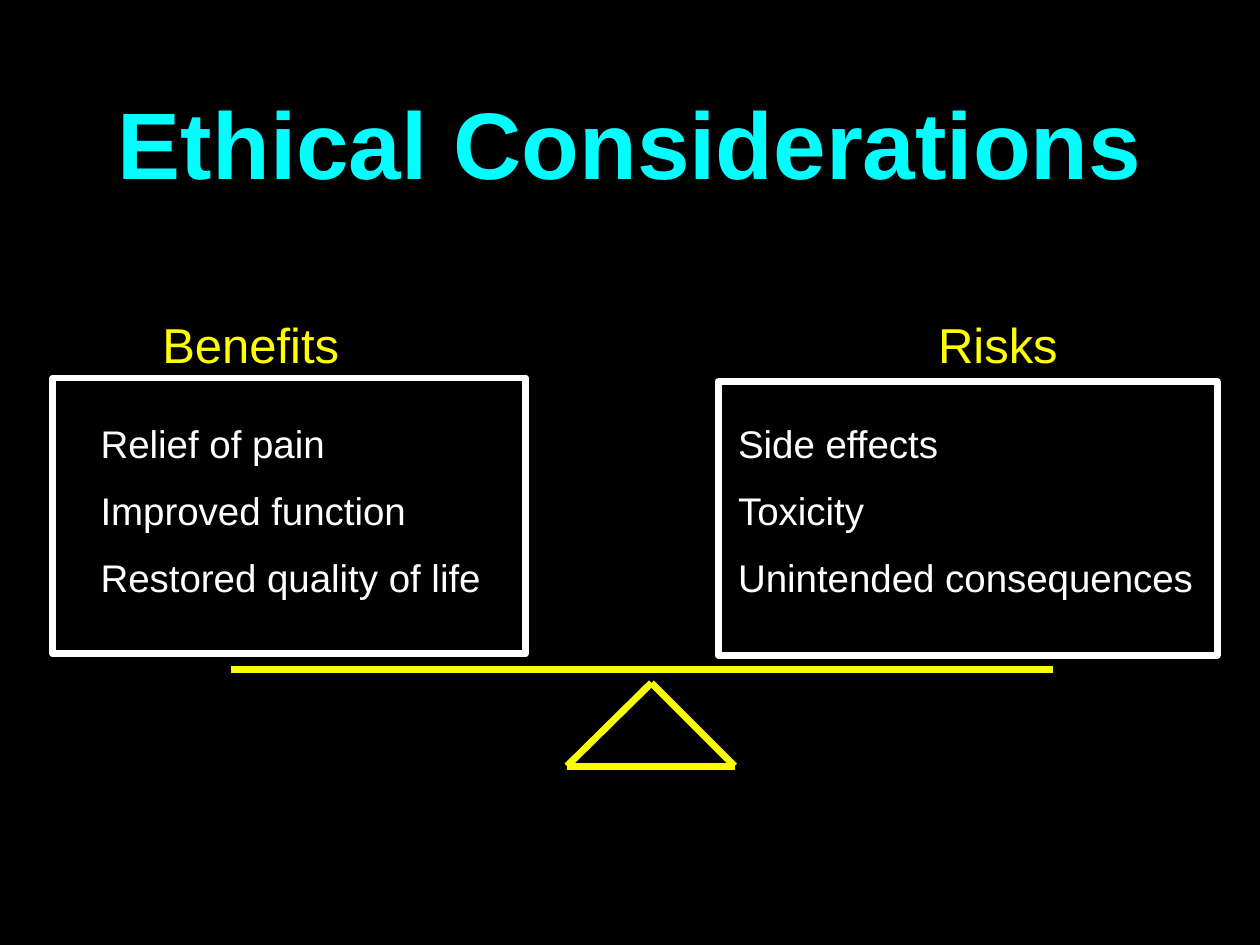
import pptx
import pptx.dml.color
import pptx.enum.shapes
import pptx.enum.text
import pptx.oxml.ns
import pptx.util
from lxml import etree

Inches = pptx.util.Inches
Pt = pptx.util.Pt
ALIGN = pptx.enum.text.PP_ALIGN
ANCHOR = pptx.enum.text.MSO_ANCHOR
COLORS = {
    "background": "000000",
    "title": "00FFFF",
    "heading": "FFFF00",
    "scale": "FAFD00",
    "white": "FFFFFF",
}


def color(name):
    """Return the named colour."""
    return pptx.dml.color.RGBColor.from_string(COLORS[name])


def add_text(slide, box, text, size, fill, bold=False, align=ALIGN.LEFT,
             anchor=ANCHOR.TOP, inset=0.1, top=0.08, gap=0):
    """Place text in a box, one paragraph for each line."""
    frame = slide.shapes.add_textbox(*map(Inches, box)).text_frame
    frame.word_wrap = True
    frame.vertical_anchor = anchor
    frame.margin_left = Inches(inset)
    frame.margin_top = Inches(top)
    for index, line in enumerate(text.split("\n")):
        para = frame.paragraphs[0] if index == 0 else frame.add_paragraph()
        para.alignment = align
        para.space_before = Pt(gap if index else 0)
        span = para.add_run()
        span.text = line
        span.font.name = "Arial"
        span.font.size = Pt(size)
        span.font.bold = bold
        span.font.color.rgb = color(fill)


def add_line(slide, start, end):
    """Draw one straight beam of the scale."""
    line = slide.shapes.add_connector(
        pptx.enum.shapes.MSO_CONNECTOR.STRAIGHT, *map(Inches, start + end))
    line.line.color.rgb = color("scale")
    line.line.width = Pt(4)
    properties = line.element.find(pptx.oxml.ns.qn("p:spPr"))
    etree.SubElement(properties, pptx.oxml.ns.qn("a:effectLst"))


def add_scale(slide, box):
    """Draw the balance beam on its triangular pivot."""
    left, top, width, height = box
    apex = (left + 3.34, top + 0.11)
    base_left = (apex[0] - 0.67, top + height)
    base_right = (apex[0] + 0.66, top + height)
    add_line(slide, (left, top), (left + width, top))
    add_line(slide, apex, base_left)
    add_line(slide, apex, base_right)
    add_line(slide, base_right, base_left)


def add_pan(slide, box, heading, items, heading_left, heading_width,
            heading_align, item_left):
    """Draw one framed list with its heading above."""
    left, top, width, height = box
    frame = slide.shapes.add_shape(
        pptx.enum.shapes.MSO_SHAPE.RECTANGLE, *map(Inches, box))
    frame.shadow.inherit = False
    frame.fill.background()
    frame.line.color.rgb = color("white")
    frame.line.width = Pt(4)
    add_text(slide, (left + item_left, 3.25, width - item_left, 1.57),
             "\n".join(items), 22, "white", gap=12)
    add_text(slide, (left + heading_left, 2.42, heading_width, 0.57),
             heading, 28, "heading", align=heading_align)


def main():
    """Build and save the slide."""
    deck = pptx.Presentation()
    deck.slide_width, deck.slide_height = Inches(10), Inches(7.5)
    slide = deck.slides.add_slide(deck.slide_layouts[6])
    slide.background.fill.solid()
    slide.background.fill.fore_color.rgb = color("background")
    add_text(slide, (0.5, 0.5, 9, 1.25), "Ethical Considerations", 54, "title",
             bold=True, align=ALIGN.CENTER, anchor=ANCHOR.MIDDLE, top=0.05)
    add_scale(slide, (1.83, 5.31, 6.53, 0.77))
    add_pan(slide, (0.42, 3, 3.75, 2.19), "Benefits",
            ["Relief of pain", "Improved function", "Restored quality of life"],
            0.77, 1.92, ALIGN.LEFT, 0.28)
    add_pan(slide, (5.7, 3.03, 3.96, 2.17), "Risks",
            ["Side effects", "Toxicity", "Unintended consequences"],
            0.47, 3.5, ALIGN.CENTER, 0.06)
    deck.save("out.pptx")


if __name__ == "__main__":
    main()
